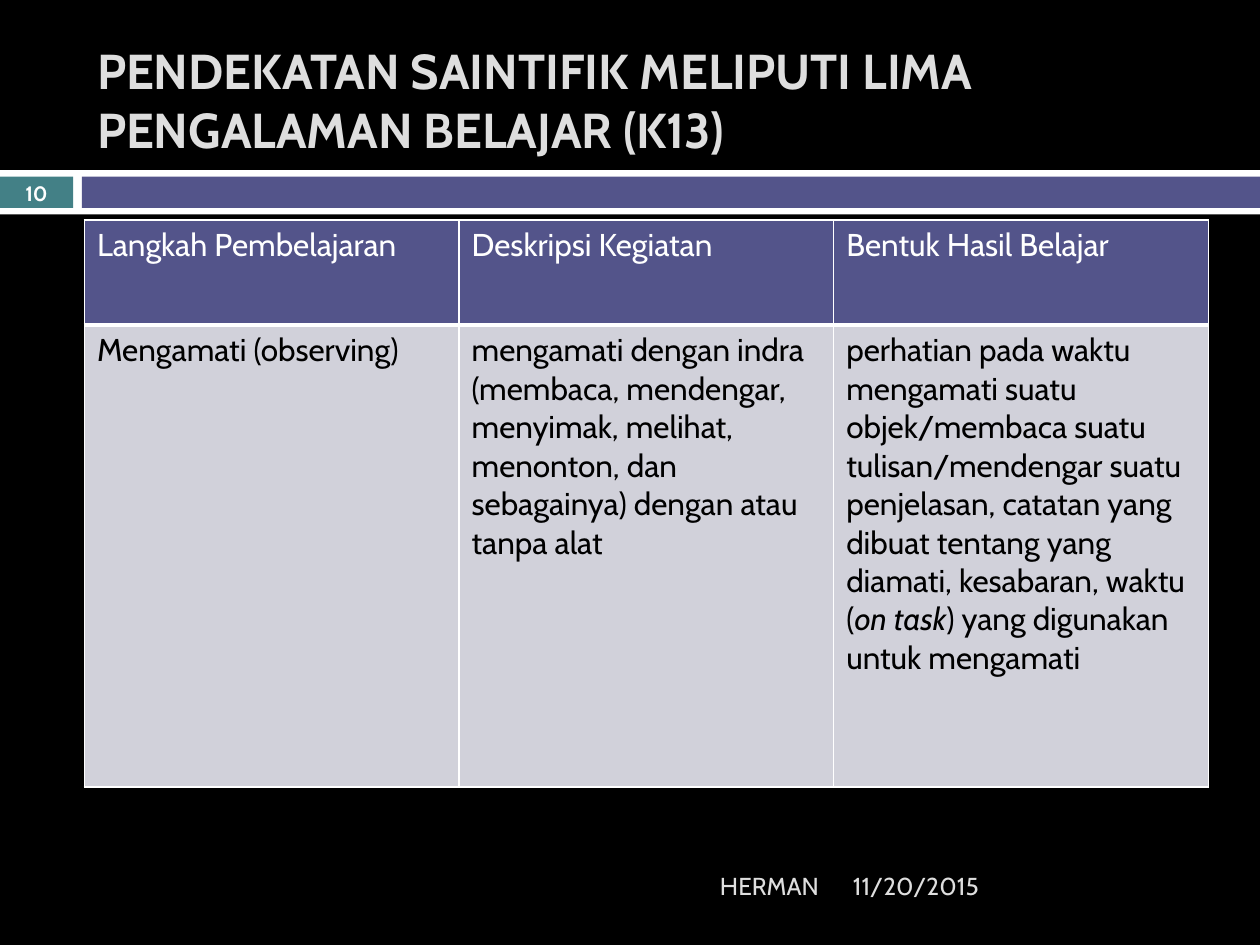
from dataclasses import dataclass

from lxml import etree
from pptx import Presentation
from pptx import util as u
from pptx.dml.color import RGBColor
from pptx.enum import shapes, text
from pptx.oxml import ns

WIDTH, HEIGHT = u.Inches(10), u.Inches(7.5)
FONT = "Cabin"
BLACK = RGBColor(0x00, 0x00, 0x00)
WHITE = RGBColor(0xFF, 0xFF, 0xFF)
PALE = RGBColor(0xDE, 0xDE, 0xDE)
TEAL = RGBColor(0x43, 0x80, 0x86)
INDIGO = RGBColor(0x53, 0x54, 0x8A)
LAVENDER = RGBColor(0xD1, 0xD1, 0xDA)


@dataclass(frozen=True)
class Box:
    left: float
    top: float
    width: float
    height: float

    def lengths(self) -> tuple[int, int, int, int]:
        return (int(WIDTH * self.left), int(HEIGHT * self.top),
                int(WIDTH * self.width), int(HEIGHT * self.height))


@dataclass(frozen=True)
class Band:
    box: Box
    color: RGBColor


@dataclass(frozen=True)
class Label:
    wording: str
    box: Box
    size: float
    color: RGBColor
    align: text.PP_ALIGN = text.PP_ALIGN.LEFT
    bold: bool = False


@dataclass(frozen=True)
class RowStyle:
    height: float
    fill: RGBColor
    color: RGBColor
    bottom_line: float


CONTENT_LEFT, CONTENT_WIDTH = 0.067, 0.892
BANDS = [
    Band(Box(0, 0.18, 1, 0.047), WHITE),
    Band(Box(0, 0.187, 0.058, 0.033), TEAL),
    Band(Box(0.065, 0.187, 0.935, 0.033), INDIGO),
]
TITLE = Label("PENDEKATAN SAINTIFIK MELIPUTI LIMA PENGALAMAN BELAJAR (K13)",
              Box(CONTENT_LEFT, 0.033, CONTENT_WIDTH, 0.144), 28, PALE, bold=True)
LABELS = [
    Label("11/20/2015", Box(0.667, 0.911, 0.292, 0.053), 14, PALE),
    Label("HERMAN", Box(CONTENT_LEFT, 0.911, 0.593, 0.053), 14, PALE, text.PP_ALIGN.RIGHT),
    Label("10", Box(0, 0.186, 0.058, 0.036), 11.9, WHITE, text.PP_ALIGN.CENTER, True),
]
TABLE_BOX = Box(CONTENT_LEFT, 0.233, CONTENT_WIDTH, 0.6)
ROW_STYLES = [RowStyle(0.111, INDIGO, WHITE, 3), RowStyle(0.489, LAVENDER, BLACK, 1)]
ROWS = [
    [["Langkah Pembelajaran"], ["Deskripsi Kegiatan"], ["Bentuk Hasil Belajar"]],
    [
        ["Mengamati (observing)"],
        ["mengamati dengan indra (membaca, mendengar, menyimak, melihat, "
         "menonton, dan sebagainya) dengan atau tanpa alat"],
        ["perhatian pada waktu mengamati suatu objek/membaca suatu "
         "tulisan/mendengar suatu penjelasan, catatan yang dibuat tentang yang "
         "diamati, kesabaran, waktu (", "on task", ") yang digunakan untuk mengamati"],
    ],
]


def draw_band(slide, band: Band) -> None:
    shape = slide.shapes.add_shape(shapes.MSO_SHAPE.RECTANGLE, *band.box.lengths())
    shape.shadow.inherit = False
    shape.fill.solid()
    shape.fill.fore_color.rgb = band.color
    shape.line.fill.background()


def set_font(paragraph, size: float, color: RGBColor, bold: bool = False) -> None:
    paragraph.font.name = FONT
    paragraph.font.size = u.Pt(size)
    paragraph.font.bold = bold
    paragraph.font.color.rgb = color


def write_label(shape, label: Label) -> None:
    shape.left, shape.top, shape.width, shape.height = label.box.lengths()
    frame = shape.text_frame
    frame.text = label.wording
    frame.word_wrap = True
    frame.auto_size = text.MSO_AUTO_SIZE.NONE
    frame.vertical_anchor = text.MSO_ANCHOR.MIDDLE
    if label.size < 12:
        frame.margin_top = frame.margin_bottom = 0
    paragraph = frame.paragraphs[0]
    paragraph.alignment = label.align
    set_font(paragraph, label.size, label.color, label.bold)


def draw_border(cell, side: str, points: float) -> None:
    properties = cell._tc.get_or_add_tcPr()
    line = etree.SubElement(properties, ns.qn(f"a:ln{side}"), w=str(u.Pt(points)))
    fill = etree.SubElement(line, ns.qn("a:solidFill"))
    etree.SubElement(fill, ns.qn("a:srgbClr"), val=str(WHITE))


def write_cell(cell, pieces: list[str], style: RowStyle, top_line: float) -> None:
    for side, points in (("L", 1), ("R", 1), ("T", top_line), ("B", style.bottom_line)):
        draw_border(cell, side, points)
    cell.fill.solid()
    cell.fill.fore_color.rgb = style.fill
    paragraph = cell.text_frame.paragraphs[0]
    set_font(paragraph, 18, style.color)
    for index, piece in enumerate(pieces):
        run = paragraph.add_run()
        run.text = piece
        if index % 2:
            run.font.italic = True


def draw_table(slide) -> None:
    frame = slide.shapes.add_table(len(ROWS), len(ROWS[0]), *TABLE_BOX.lengths())
    table = frame.table
    top_line = 1
    for row, style, contents in zip(table.rows, ROW_STYLES, ROWS):
        row.height = int(HEIGHT * style.height)
        for cell, pieces in zip(row.cells, contents):
            write_cell(cell, pieces, style, top_line)
        top_line = style.bottom_line


def main() -> None:
    presentation = Presentation()
    presentation.slide_width, presentation.slide_height = WIDTH, HEIGHT
    slide = presentation.slides.add_slide(presentation.slide_layouts[5])
    slide.background.fill.solid()
    slide.background.fill.fore_color.rgb = BLACK
    for band in BANDS:
        draw_band(slide, band)
    write_label(slide.shapes.title, TITLE)
    for label in LABELS:
        write_label(slide.shapes.add_textbox(*label.box.lengths()), label)
    draw_table(slide)
    presentation.save("out.pptx")


if __name__ == "__main__":
    main()
